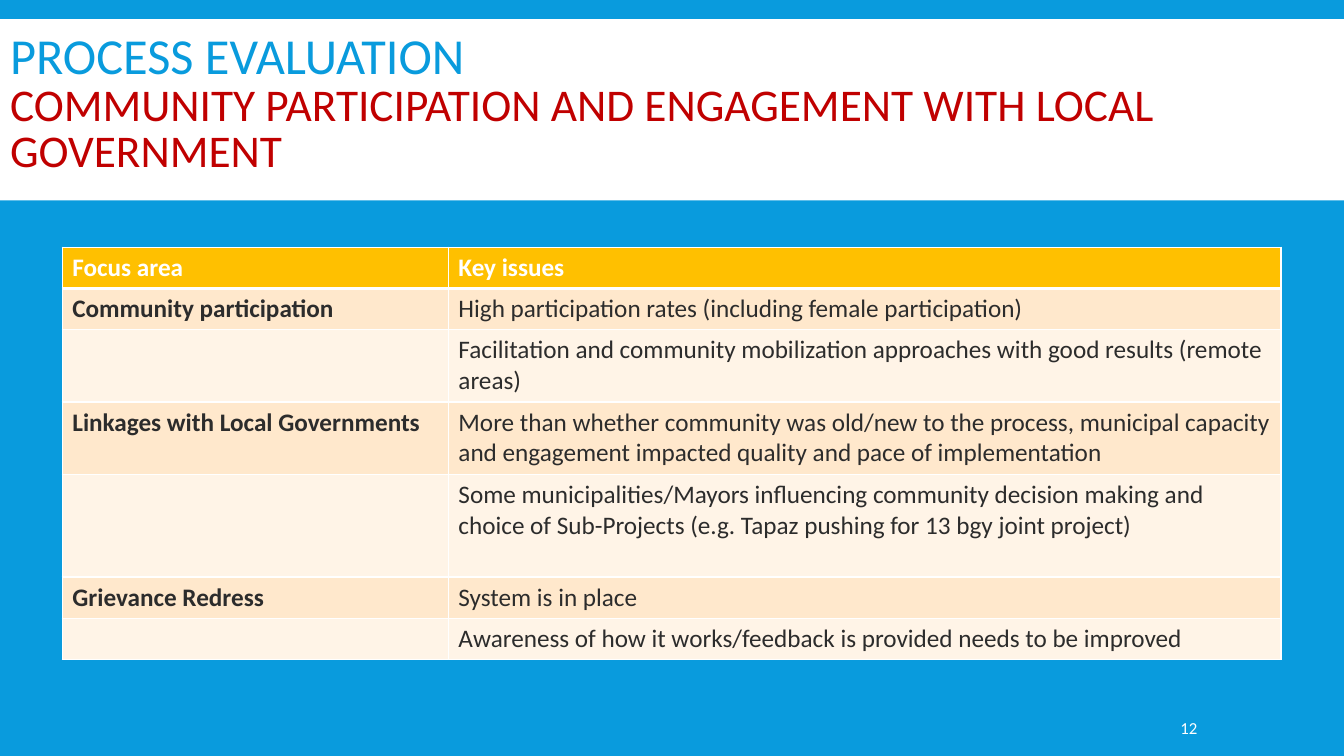
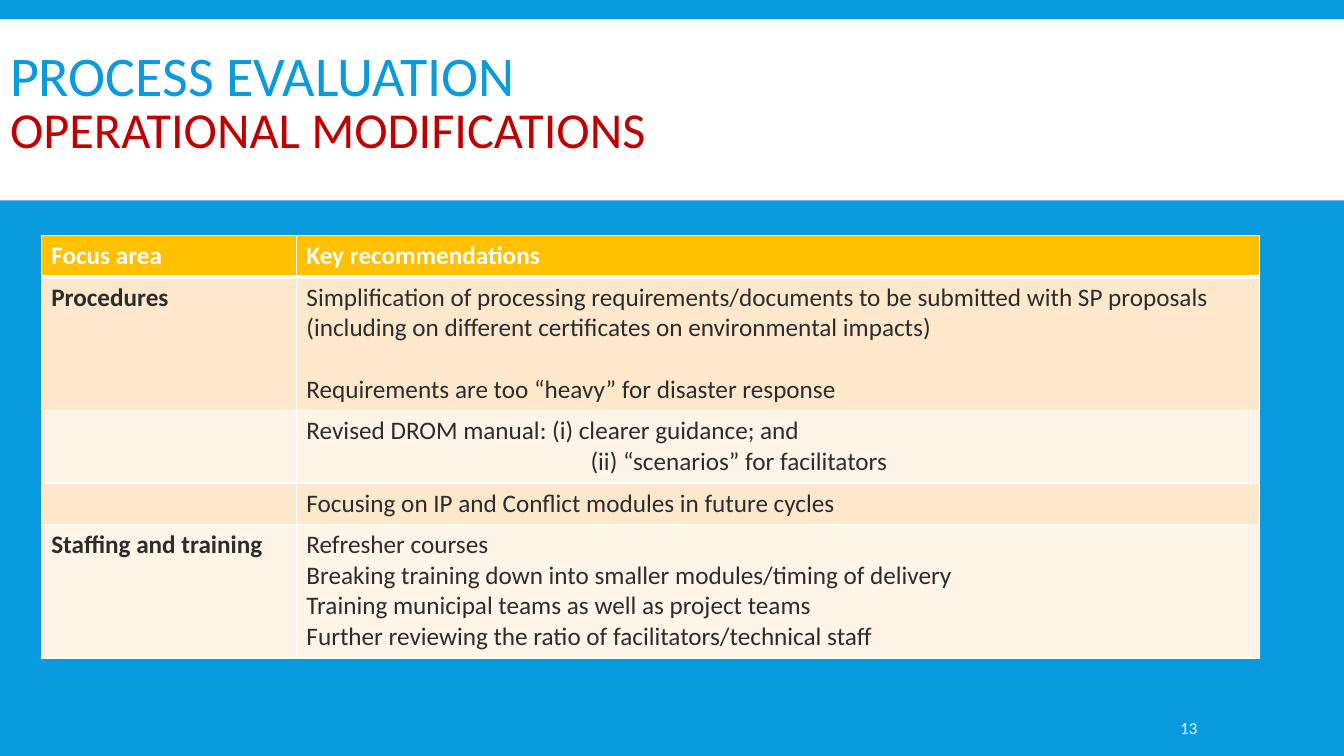
import pptx
import pptx.dml.color
import pptx.enum.shapes
import pptx.enum.text
import pptx.oxml.ns
import pptx.util
from lxml import etree

Cm = pptx.util.Cm
Pt = pptx.util.Pt
RGBColor = pptx.dml.color.RGBColor
qn = pptx.oxml.ns.qn

BLUE = RGBColor(0x09, 0x9B, 0xDD)
RED = RGBColor(0xC0, 0x00, 0x00)
WHITE = RGBColor(0xFF, 0xFF, 0xFF)
DARK = RGBColor(0x2C, 0x2C, 0x2C)
GOLD = RGBColor(0xFF, 0xC0, 0x00)
BANDS = (RGBColor(0xFF, 0xE8, 0xCC), RGBColor(0xFF, 0xF4, 0xE7))

FONT = "Calibri"
SLIDE_W, SLIDE_H = Cm(33.87), Cm(19.05)

# Row heights by number of text lines
LINES = {1: Cm(1.04), 2: Cm(1.82), 3: Cm(2.59), 4: Cm(3.37)}


class Deck:
    """Holds the shared style and the current slide."""

    def __init__(self):
        self.prs = pptx.Presentation()
        self.prs.slide_width, self.prs.slide_height = SLIDE_W, SLIDE_H
        fill = self.prs.slide_master.background.fill
        fill.solid()
        fill.fore_color.rgb = BLUE
        self.s = None

    def add_run(self, p, text, size, color, bold=False):
        r = p.add_run()
        r.text = text
        r.font.name = FONT
        r.font.size = Pt(size)
        r.font.bold = bold
        r.font.color.rgb = color

    def add_slide(self, topic, number, sizes, title_width=SLIDE_W):
        self.s = self.prs.slides.add_slide(self.prs.slide_layouts[5])
        self.add_band()
        self.add_title(topic, sizes, title_width)
        self.add_number(number)

    def add_band(self):
        sp = self.s.shapes.add_shape(
            pptx.enum.shapes.MSO_SHAPE.RECTANGLE, 0, Cm(0.48), SLIDE_W, Cm(4.57))
        sp.shadow.inherit = False
        sp.fill.solid()
        sp.fill.fore_color.rgb = WHITE
        sp.line.fill.background()
        # Keep the band behind the title
        self.s.shapes.title.element.addprevious(sp.element)

    def add_title(self, topic, sizes, width):
        sp = self.s.shapes.title
        sp.left, sp.top, sp.width, sp.height = 0, Cm(0.55), width, Cm(4.19)
        tf = sp.text_frame
        tf.auto_size = pptx.enum.text.MSO_AUTO_SIZE.NONE
        tf.vertical_anchor = pptx.enum.text.MSO_ANCHOR.MIDDLE
        p = tf.paragraphs[0]
        p.alignment = pptx.enum.text.PP_ALIGN.LEFT
        p.line_spacing = 0.85
        self.add_run(p, "PROCESS EVALUATION", sizes[0], BLUE)
        p.add_line_break()
        # The break takes the size of its line
        etree.SubElement(p._p[-1], qn("a:rPr"), sz=str(sizes[0] * 100))
        self.add_run(p, topic, sizes[1], RED)

    def add_number(self, number):
        sp = self.s.shapes.add_textbox(Cm(29.62), Cm(17.83), Cm(2.62), Cm(1.02))
        tf = sp.text_frame
        tf.word_wrap = True
        tf.vertical_anchor = pptx.enum.text.MSO_ANCHOR.MIDDLE
        tf.margin_left = tf.margin_top = tf.margin_bottom = Cm(0.13)
        self.add_run(tf.paragraphs[0], str(number), 12, WHITE)

    def add_borders(self, cell, row):
        tcPr = cell._tc.get_or_add_tcPr()
        heavy = {0: "B", 1: "T"}.get(row)
        for side in "LRTB":
            width = Pt(3 if side == heavy else 1)
            ln = etree.SubElement(tcPr, qn(f"a:ln{side}"), w=str(width))
            fill = etree.SubElement(ln, qn("a:solidFill"))
            etree.SubElement(fill, qn("a:srgbClr"), val=str(WHITE))

    def add_cell(self, cell, row, paragraphs, bold):
        self.add_borders(cell, row)
        cell.fill.solid()
        cell.fill.fore_color.rgb = BANDS[(row - 1) % 2] if row else GOLD
        tf = cell.text_frame
        for i, item in enumerate(paragraphs):
            p = tf.add_paragraph() if i else tf.paragraphs[0]
            text, gap, indent = item if isinstance(item, tuple) else (item, 0, 0)
            p.space_before = Pt(gap)
            if indent:
                p._p.get_or_add_pPr().set("marL", str(Cm(indent)))
            self.add_run(p, text, 18, DARK if row else WHITE, bold)

    def add_table(self, left, top, widths, rows):
        """Each row is (focus area, paragraphs, height in lines);
        a paragraph may be (text, space before in pt, indent in cm)."""
        heights = [LINES[lines] for _, _, lines in rows]
        tbl = self.s.shapes.add_table(
            len(rows), 2, left, top, sum(widths), sum(heights)).table
        tbl.horz_banding = False
        for col, width in zip(tbl.columns, widths):
            col.width = width
        for i, (area, paragraphs, _) in enumerate(rows):
            tbl.rows[i].height = heights[i]
            self.add_cell(tbl.cell(i, 0), i, [area] if area else [], True)
            self.add_cell(tbl.cell(i, 1), i, paragraphs, i == 0)


def main():
    deck = Deck()

    # Community participation
    deck.add_slide("COMMUNITY PARTICIPATION AND ENGAGEMENT WITH LOCAL GOVERNMENT",
                   12, (36, 32.4))
    deck.add_table(Cm(1.57), Cm(6.23), (Cm(9.73), Cm(20.98)), [
        ("Focus area", ["Key issues"], 1),
        ("Community participation",
         ["High participation rates (including female participation)"], 1),
        ("", ["Facilitation and community mobilization approaches with good "
              "results (remote areas)"], 2),
        ("Linkages with Local Governments",
         ["More than whether community was old/new to the process, municipal "
          "capacity and engagement impacted quality and pace of "
          "implementation"], 2),
        ("", ["Some municipalities/Mayors influencing community decision making "
              "and choice of Sub-Projects (e.g. Tapaz pushing for 13 bgy joint "
              "project)"], 3),
        ("Grievance Redress", ["System is in place"], 1),
        ("", ["Awareness of how it works/feedback is provided needs to be "
              "improved"], 1),
    ])

    # Operational modifications
    deck.add_slide("OPERATIONAL MODIFICATIONS", 13, (40, 36), Cm(27.18))
    deck.add_table(Cm(1.04), Cm(5.94), (Cm(6.43), Cm(24.28)), [
        ("Focus area", ["Key recommendations"], 1),
        ("Procedures",
         ["Simplification of processing requirements/documents to be submitted "
          "with SP proposals",
          "(including on different certificates on environmental impacts)",
          ("Requirements are too “heavy” for disaster response", 22, 0)], 4),
        ("", ["Revised DROM manual: (i) clearer guidance; and",
              ("(ii) “scenarios” for facilitators", 0, 7.16)], 2),
        ("", ["Focusing on IP and Conflict modules in future cycles"], 1),
        ("Staffing and training",
         ["Refresher courses",
          "Breaking training down into smaller modules/timing of delivery",
          "Training municipal teams as well as project teams",
          "Further reviewing the ratio of facilitators/technical staff"], 4),
    ])

    deck.prs.save("out.pptx")


if __name__ == "__main__":
    main()
